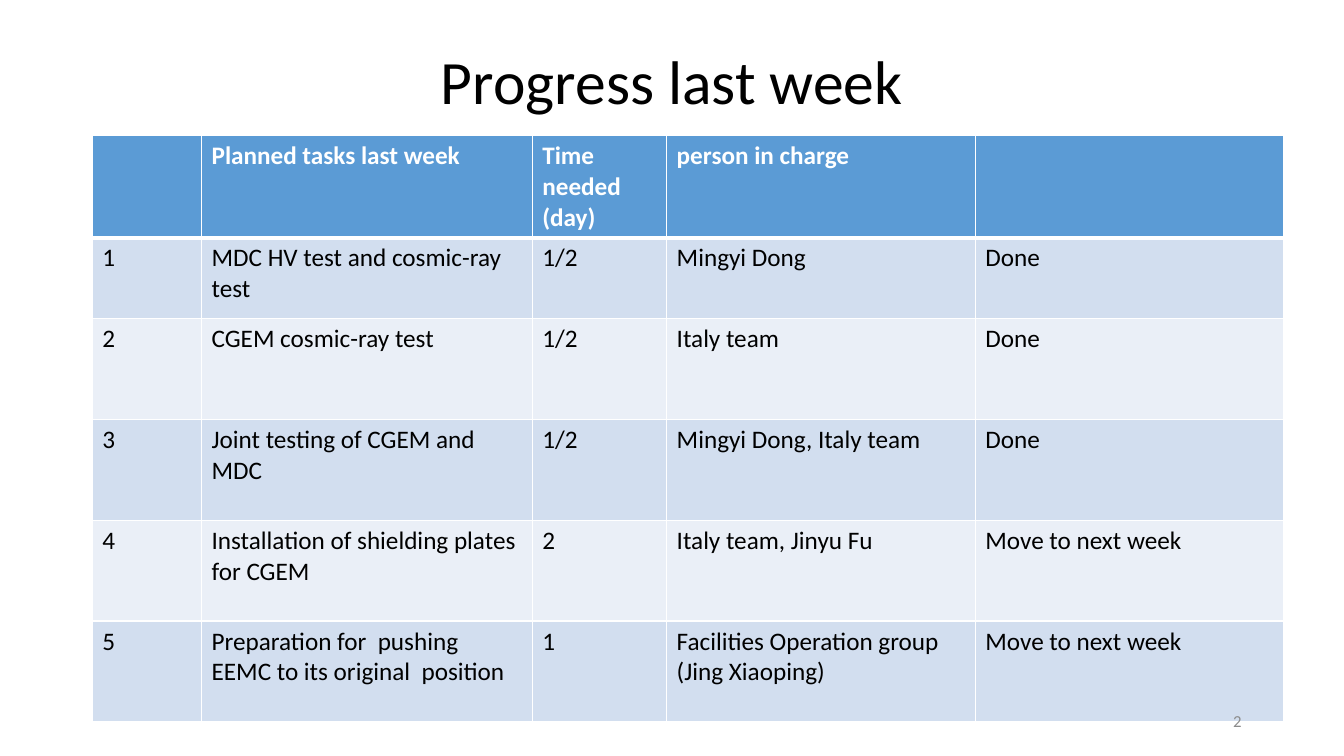
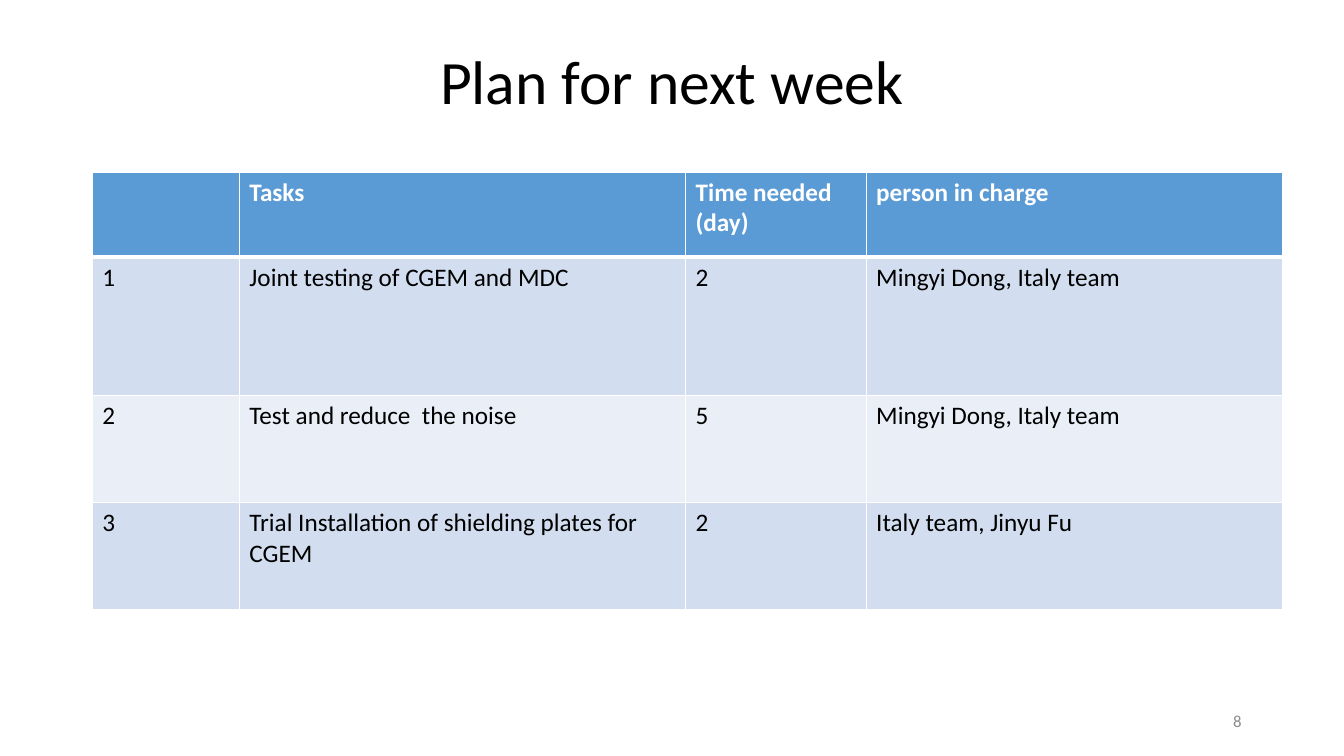
from dataclasses import dataclass

from lxml import etree
from pptx import Presentation
from pptx.dml.color import RGBColor
from pptx.enum.text import MSO_ANCHOR, MSO_AUTO_SIZE, PP_ALIGN
from pptx.oxml.ns import qn
from pptx.util import Pt

EMU_PER_PX = 9525
PAGE_WIDTH, PAGE_HEIGHT = 1280, 720
LEFT = 88
TITLE_BOX = (LEFT, 31, 1104, 99)
NUMBER_BOX = (904, 667, 288, 38)
TITLE_ONLY_LAYOUT = 5

WHITE = RGBColor(0xFF, 0xFF, 0xFF)
BLACK = RGBColor(0x00, 0x00, 0x00)
GRAY = RGBColor(0x8C, 0x8C, 0x8C)
HEADER_BLUE = RGBColor(0x5B, 0x9B, 0xD5)
BAND_FILLS = (RGBColor(0xD2, 0xDE, 0xEF), RGBColor(0xEA, 0xEF, 0xF7))

CENTER, RIGHT = PP_ALIGN.CENTER, PP_ALIGN.RIGHT
MIDDLE = MSO_ANCHOR.MIDDLE
NO_AUTOFIT = MSO_AUTO_SIZE.NONE

FONT = "Calibri"
TITLE_FORMAT = {"name": FONT, "size": Pt(44), "bold": False, "color": BLACK}
HEADER_FORMAT = {"name": FONT, "size": Pt(18), "bold": True, "color": WHITE}
BODY_FORMAT = {**HEADER_FORMAT, "bold": False, "color": BLACK}
NUMBER_FORMAT = {"name": FONT, "size": Pt(12), "bold": False, "color": GRAY}


@dataclass(frozen=True)
class TaskPage:
    title: str
    number: int
    table_top: int
    column_widths: tuple[int, ...]
    row_heights: tuple[int, ...]
    header: tuple[str, ...]
    tasks: tuple[tuple[str, ...], ...]


PAGES = (
    TaskPage(
        title="Progress last week",
        number=2,
        table_top=129,
        column_widths=(104, 315, 128, 294, 294),
        row_heights=(87, 77, 96, 96, 96, 96),
        header=("Planned tasks last week", "Time needed (day)", "person in charge", ""),
        tasks=(
            ("MDC HV test and cosmic-ray test", "1/2", "Mingyi Dong", "Done"),
            ("CGEM cosmic-ray test", "1/2", "Italy team", "Done"),
            ("Joint testing of CGEM and MDC", "1/2", "Mingyi Dong, Italy team", "Done"),
            ("Installation of shielding plates for CGEM", "2",
             "Italy team, Jinyu Fu", "Move to next week"),
            ("Preparation for  pushing EEMC to its original  position", "1",
             "Facilities Operation group (Jing Xiaoping)", "Move to next week"),
        ),
    ),
    TaskPage(
        title="Plan for next week",
        number=8,
        table_top=164,
        column_widths=(140, 425, 172, 397),
        row_heights=(81, 132, 102, 102),
        header=("Tasks", "Time needed (day)", "person in charge"),
        tasks=(
            ("Joint testing of CGEM and MDC", "2", "Mingyi Dong, Italy team"),
            ("Test and reduce  the noise", "5", "Mingyi Dong, Italy team"),
            ("Trial Installation of shielding plates for CGEM", "2", "Italy team, Jinyu Fu"),
        ),
    ),
)


def px(length: int) -> int:
    return length * EMU_PER_PX


def write_text(frame, text: str, text_format: dict, align=None) -> None:
    paragraph = frame.paragraphs[0]
    if align is not None:
        paragraph.alignment = align
    if not text:
        return
    span = paragraph.add_run()
    span.text = text
    for name, value in text_format.items():
        if name == "color":
            span.font.color.rgb = value
        else:
            setattr(span.font, name, value)


def add_borders(cell, top: int, bottom: int) -> None:
    """Draw white borders; top and bottom are widths in points."""
    properties = cell._tc.get_or_add_tcPr()
    for side, width in (("L", 1), ("R", 1), ("T", top), ("B", bottom)):
        line = etree.SubElement(properties, qn(f"a:ln{side}"), w=str(Pt(width)))
        fill = etree.SubElement(line, qn("a:solidFill"))
        etree.SubElement(fill, qn("a:srgbClr"), val=str(WHITE))


def add_title(slide, text: str) -> None:
    title = slide.shapes.title
    title.left, title.top, title.width, title.height = map(px, TITLE_BOX)
    frame = title.text_frame
    frame.auto_size = NO_AUTOFIT
    frame.vertical_anchor = MIDDLE
    frame.paragraphs[0].line_spacing = 0.9
    write_text(frame, text, TITLE_FORMAT, CENTER)


def add_task_table(slide, page: TaskPage) -> None:
    rows = [("", *page.header)]
    rows += [(str(index), *task) for index, task in enumerate(page.tasks, 1)]
    table = slide.shapes.add_table(
        len(rows), len(page.column_widths), px(LEFT), px(page.table_top),
        px(sum(page.column_widths)), px(sum(page.row_heights)),
    ).table
    for column, width in zip(table.columns, page.column_widths):
        column.width = px(width)
    for index, (row, height, texts) in enumerate(zip(table.rows, page.row_heights, rows)):
        row.height = px(height)
        is_header = index == 0
        for cell, text in zip(row.cells, texts):
            add_borders(cell, top=3 if index == 1 else 1, bottom=3 if is_header else 1)
            cell.fill.solid()
            cell.fill.fore_color.rgb = HEADER_BLUE if is_header else BAND_FILLS[(index - 1) % 2]
            write_text(cell.text_frame, text, HEADER_FORMAT if is_header else BODY_FORMAT)


def add_page_number(slide, number: int) -> None:
    frame = slide.shapes.add_textbox(*map(px, NUMBER_BOX)).text_frame
    frame.word_wrap = True
    frame.vertical_anchor = MIDDLE
    write_text(frame, str(number), NUMBER_FORMAT, RIGHT)


def main() -> None:
    deck = Presentation()
    deck.slide_width, deck.slide_height = px(PAGE_WIDTH), px(PAGE_HEIGHT)
    for page in PAGES:
        slide = deck.slides.add_slide(deck.slide_layouts[TITLE_ONLY_LAYOUT])
        add_title(slide, page.title)
        add_task_table(slide, page)
        add_page_number(slide, page.number)
    deck.save("out.pptx")


if __name__ == "__main__":
    main()
